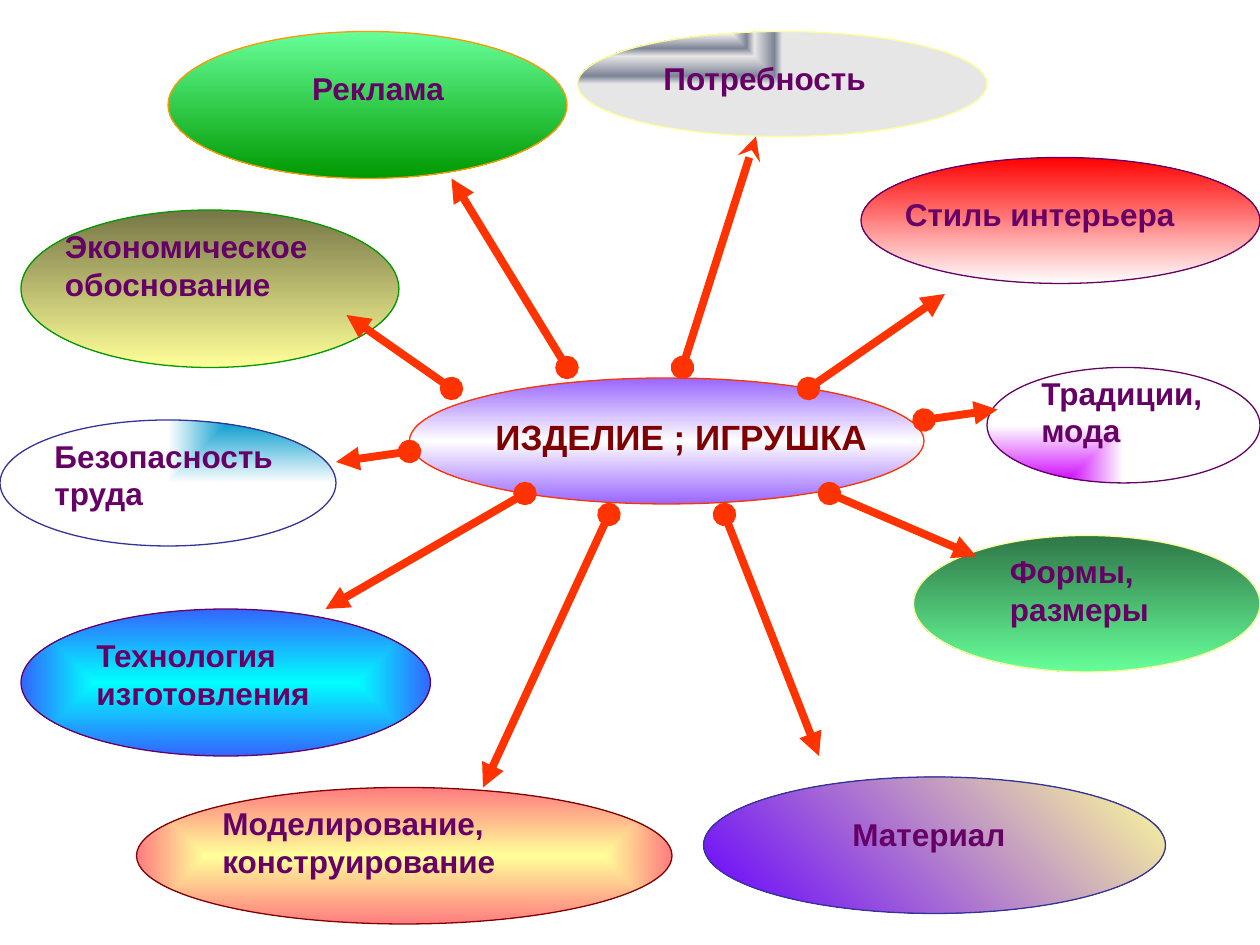
from dataclasses import dataclass

from pptx import Presentation
from pptx.dml.color import RGBColor
from pptx.enum.shapes import MSO_CONNECTOR, MSO_SHAPE
from pptx.enum.text import MSO_AUTO_SIZE, PP_ALIGN
from pptx.oxml import parse_xml
from pptx.oxml.ns import nsdecls
from pptx.util import Pt

PX = 9525


@dataclass(frozen=True)
class Theme:
    """Colours and type sizes of the slide."""
    font: str = "Arial"
    hub_text: str = "800000"
    topic_text: str = "660066"
    arrow: str = "FF3300"
    hub_size: int = 20
    topic_size: int = 18
    outline: float = 0.75
    ray: float = 4.5


THEME = Theme()


def linear(angle, *colors):
    """Return a linear gradient with evenly spaced colours."""
    last = len(colors) - 1
    stops = [(100 * i // last, c) for i, c in enumerate(colors)]
    return stops, f'<a:lin ang="{angle * 60000}" scaled="1"/>'


def radial(kind, focus, *stops):
    """Return a path gradient whose focus is left, top, right, bottom in percent."""
    sides = " ".join(f'{k}="{v * 1000}"' for k, v in zip("ltrb", focus))
    return stops, f'<a:path path="{kind}"><a:fillToRect {sides}/></a:path>'


CENTER = (50, 50, 50, 50)
HUB_FILL = linear(90, "9966FF", "FFFFFF", "9966FF")
SILVER = [(0, "FFFFFF"), (7, "E6E6E6"), (32, "7D8496"),
          (47, "E6E6E6"), (85, "7D8496"), (100, "E6E6E6")]

TOPICS = [
    ((440, 24, 312, 80), radial("rect", (0, 0, 100, 100), *SILVER), "FFFF99",
     (56, 16, 224, 48), "Потребность"),
    ((656, 120, 304, 96), linear(90, "FF0000", "FFFFFF"), "660066",
     (24, 24, 296, 48), "Стиль интерьера"),
    ((752, 280, 208, 88),
     radial("rect", (0, 100, 100, 0), (0, "CC00FF"), (100, "FFFFFF")), "660066",
     (32, 0, 200, 86), "Традиции, мода"),
    ((696, 408, 264, 104), linear(90, "2F7647", "66FF99"), "FFFF99",
     (64, 8, 232, 68), "Формы,\vразмеры"),
    ((536, 592, 352, 104), linear(315, "6600FF", "FFFF99"), "333399",
     (104, 24, 256, 48), "Материал"),
    ((104, 600, 408, 104),
     radial("shape", CENTER, (0, "FFFF99"), (100, "FF7C80")), "800000",
     (56, 8, 384, 86), "Моделирование, конструирование"),
    ((16, 464, 312, 112),
     radial("shape", CENTER, (0, "00FFFF"), (100, "3366FF")), "660066",
     (48, 16, 280, 86), "Технология изготовления"),
    ((0, 320, 256, 96),
     radial("rect", (100, 0, 0, 100), (0, "0099CC"), (100, "FFFFFF")), "333399",
     (32, 8, 272, 68), "Безопасность\vтруда"),
    ((16, 160, 288, 120), linear(90, "767647", "FFFF99"), "009900",
     (24, 8, 256, 86), "Экономическое обоснование"),
    ((128, 24, 304, 112), linear(90, "66FF99", "009900"), "FF9900",
     (8, 24, 304, 38), "Реклама"),
]

RAYS = [
    ((208, -8), (264, -184), "stealth"),
    ((304, 8), (408, -64), "triangle"),
    ((392, 32), (448, 24), "triangle"),
    ((320, 88), (432, 136), "triangle"),
    ((240, 104), (312, 288), "triangle"),
    ((152, 104), (56, 312), "triangle"),
    ((88, 88), (-64, 176), "triangle"),
    ((0, 56), (-56, 64), "triangle"),
    ((32, 8), (-48, -48), "triangle"),
    ((120, -8), (32, -152), "triangle"),
]


def add_text(slide, text, box, size, color, align=PP_ALIGN.LEFT):
    """Add a bold wrapped text box."""
    tf = slide.shapes.add_textbox(*(v * PX for v in box)).text_frame
    tf.word_wrap = True
    tf.auto_size = MSO_AUTO_SIZE.SHAPE_TO_FIT_TEXT
    p = tf.paragraphs[0]
    p.text = text
    p.alignment = align
    for r in p.runs:
        r.font.name, r.font.size, r.font.bold = THEME.font, Pt(size), True
        r.font.color.rgb = RGBColor.from_string(color)


def add_oval(slide, box, fill, line):
    """Add an ellipse with a gradient fill and a thin outline."""
    sp = slide.shapes.add_shape(MSO_SHAPE.OVAL, *(v * PX for v in box))
    stops, direction = fill
    marks = "".join(f'<a:gs pos="{pos * 1000}"><a:srgbClr val="{color}"/></a:gs>'
                    for pos, color in stops)
    sp._element.spPr.insert(2, parse_xml(
        f'<a:gradFill {nsdecls("a")} rotWithShape="1">'
        f'<a:gsLst>{marks}</a:gsLst>{direction}</a:gradFill>'))
    sp.line.color.rgb = RGBColor.from_string(line)
    sp.line.width = Pt(THEME.outline)
    sp.shadow.inherit = False


def add_bubble(slide, box, fill, line, label, text, **fmt):
    """Add an ellipse and its label, placed from the ellipse corner."""
    add_oval(slide, box, fill, line)
    dx, dy, width, height = label
    add_text(slide, text, (box[0] + dx, box[1] + dy, width, height), **fmt)


def add_rays(slide, box):
    """Add the arrows that lead from the hub box to the topics."""
    left, top = box[:2]
    for (x1, y1), (x2, y2), tip in RAYS:
        ends = (left + x1, top + y1, left + x2, top + y2)
        ray = slide.shapes.add_connector(MSO_CONNECTOR.STRAIGHT, *(v * PX for v in ends))
        ray.line.color.rgb = RGBColor.from_string(THEME.arrow)
        ray.line.width = Pt(THEME.ray)
        ln = ray.line._get_or_add_ln()
        for tag, kind in (("headEnd", "oval"), ("tailEnd", tip)):
            ln.append(parse_xml(f'<a:{tag} {nsdecls("a")} type="{kind}"/>'))
        ray._element.spPr.append(parse_xml(f'<a:effectLst {nsdecls("a")}/>'))


def main():
    """Build and save the slide."""
    prs = Presentation()
    prs.slide_width, prs.slide_height = 960 * PX, 720 * PX
    slide = prs.slides.add_slide(prs.slide_layouts[6])
    hub = (312, 288, 392, 96)
    add_bubble(slide, hub, HUB_FILL, THEME.arrow, (56, 24, 384, 41),
               "ИЗДЕЛИЕ ; ИГРУШКА", size=THEME.hub_size, color=THEME.hub_text)
    for topic in TOPICS:
        align = PP_ALIGN.CENTER if topic[-1] == "Реклама" else PP_ALIGN.LEFT
        add_bubble(slide, *topic, size=THEME.topic_size,
                   color=THEME.topic_text, align=align)
    add_rays(slide, hub)
    prs.save("out.pptx")


if __name__ == "__main__":
    main()
